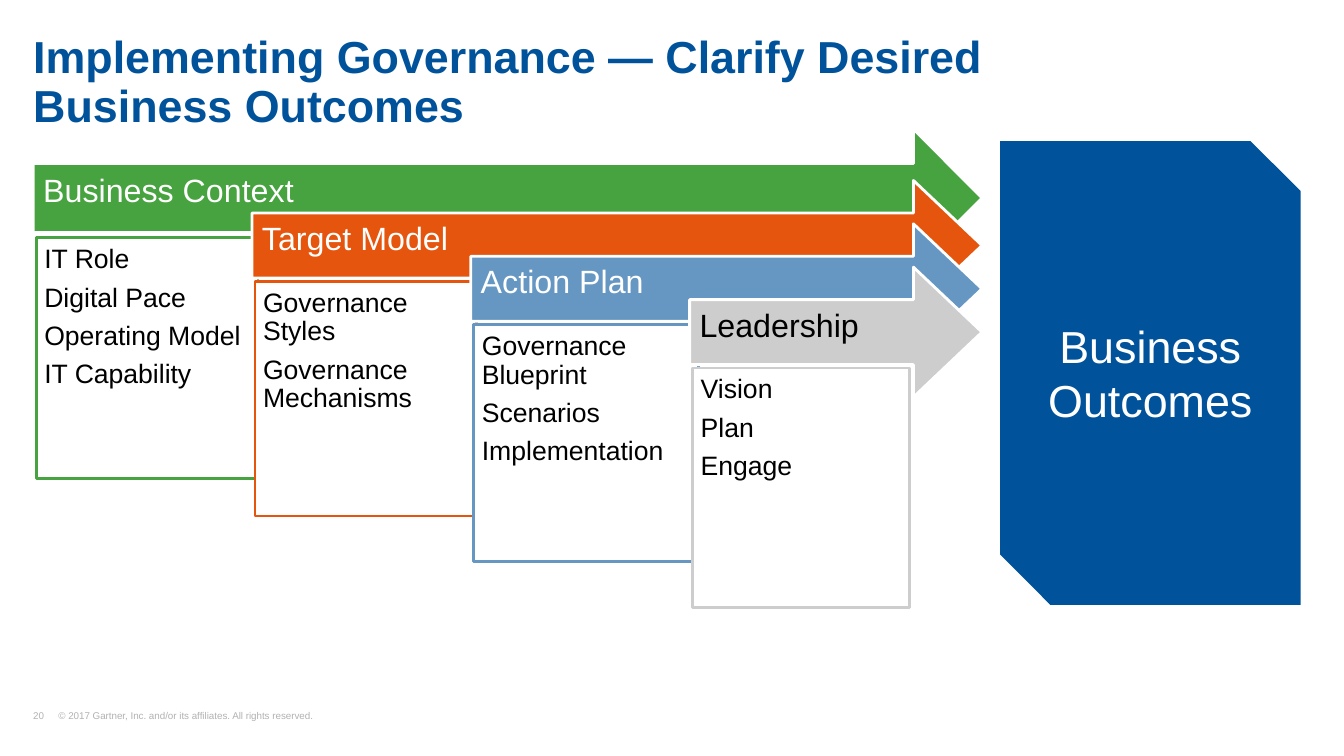
"""Build the slide on governance stages that lead to business outcomes."""
from lxml import etree
from pptx import Presentation, util as u
from pptx.dml.color import RGBColor
from pptx.enum import shapes as sh, text as tx
from pptx.oxml.ns import qn

THEME = {
    "font": "Arial", "blue": "00529B", "green": "46A33F", "orange": "E5550D",
    "steel": "6697C3", "silver": "CDCDCD", "white": "FFFFFF", "black": "000000",
    "muted": "B2B2B2", "title": 32, "stage": 23, "item": 19, "footer": 7,
}
LEFT, TIP, HEAD = 0.33, 9.74, 0.68
COLUMN, ROW = 2.17, 0.43
CARD_TOP = 2.36


def add_block(kind, box, fill=None, line=None):
    """Add a text box or a flat preset shape, measured in inches."""
    box = [u.Inches(length) for length in box]
    if kind is None:
        return slide.shapes.add_textbox(*box)
    block = slide.shapes.add_shape(kind, *box)
    block.shadow.inherit = False
    block.fill.solid()
    block.fill.fore_color.rgb = RGBColor.from_string(THEME[fill])
    if line:
        block.line.color.rgb = RGBColor.from_string(THEME[line])
        block.line.width = u.Pt(2)
    else:
        block.line.fill.background()
    return block


def write(block, words, size, color, insets, anchor=tx.MSO_ANCHOR.TOP,
          align=tx.PP_ALIGN.LEFT, spacing=0.9, after=0, bold=False, wrap=True):
    """Fill a block with text and format every run."""
    frame = block.text_frame
    frame.text = words
    frame.word_wrap = wrap
    frame.vertical_anchor = anchor
    (frame.margin_left, frame.margin_top,
     frame.margin_right, frame.margin_bottom) = [u.Inches(i) for i in insets]
    for paragraph in frame.paragraphs:
        paragraph.alignment = align
        paragraph.line_spacing = spacing
        paragraph.space_after = u.Pt(after)
        for run in paragraph.runs:
            run.font.name = THEME["font"]
            run.font.size = u.Pt(THEME[size])
            run.font.bold = bold
            run.font.color.rgb = RGBColor.from_string(THEME[color])


deck = Presentation()
deck.slide_width, deck.slide_height = u.Inches(13.33), u.Inches(7.5)
slide = deck.slides.add_slide(deck.slide_layouts[6])

footer = add_block(None, (LEFT, 7.05, 3.23, 0.11))
write(footer, "20\t© 2017 Gartner, Inc. and/or its affiliates. All rights reserved.",
      "footer", "muted", (0, 0, 0, 0), tx.MSO_ANCHOR.BOTTOM)
tabs = etree.SubElement(footer.text_frame.paragraphs[0]._p.get_or_add_pPr(), qn("a:tabLst"))
etree.SubElement(tabs, qn("a:tab"), pos=str(u.Inches(0.25)), algn="l")

title = add_block(None, (LEFT, 0.25, 12.66, 1.07))
write(title, "Implementing Governance — Clarify Desired\vBusiness Outcomes",
      "title", "blue", (0, 0.1, 0, 0), bold=True)

stages = [
    ("Business Context", "green", "white", 1.28, 1.37, 2.2, 2.39,
     ["IT Role", "Digital Pace", "Operating Model", "IT Capability"]),
    ("Target Model", "orange", "white", 1.79, 1.29, 2.2, 2.33,
     ["Governance Styles", "Governance Mechanisms"]),
    ("Action Plan", "steel", "white", 2.22, 1.29, 2.23, 2.35,
     ["Governance Blueprint", "Scenarios", "Implementation"]),
    ("Leadership", "silver", "black", 2.65, 1.29, 2.15, 2.38,
     ["Vision", "Plan", "Engage"]),
]
for step, (name, color, ink, top, height, card_width, card_height, items) in enumerate(stages):
    left = LEFT + step * COLUMN
    arrow = add_block(sh.MSO_SHAPE.RIGHT_ARROW, (left, top, TIP - left, height), color, "white")
    arrow.adjustments[0] = 0.5
    arrow.adjustments[1] = HEAD / height
    write(arrow, name, "stage", ink, (0.1, 0.1, 0.1, 0.21), tx.MSO_ANCHOR.MIDDLE)

    card = add_block(sh.MSO_SHAPE.RECTANGLE,
                     (left + 0.03, CARD_TOP + step * ROW, card_width, card_height),
                     "white", color)
    write(card, "\n".join(items), "item", "black", [0.08] * 4, after=6.7)

outcomes = add_block(sh.MSO_SHAPE.SNIP_2_DIAG_RECTANGLE, (9.92, 1.4, 2.98, 4.6), "blue")
write(outcomes, "Business\vOutcomes", "title", "white", (0.1, 0.05, 0.1, 0.05),
      tx.MSO_ANCHOR.MIDDLE, tx.PP_ALIGN.CENTER, spacing=1.0, wrap=False)

deck.save("out.pptx")
